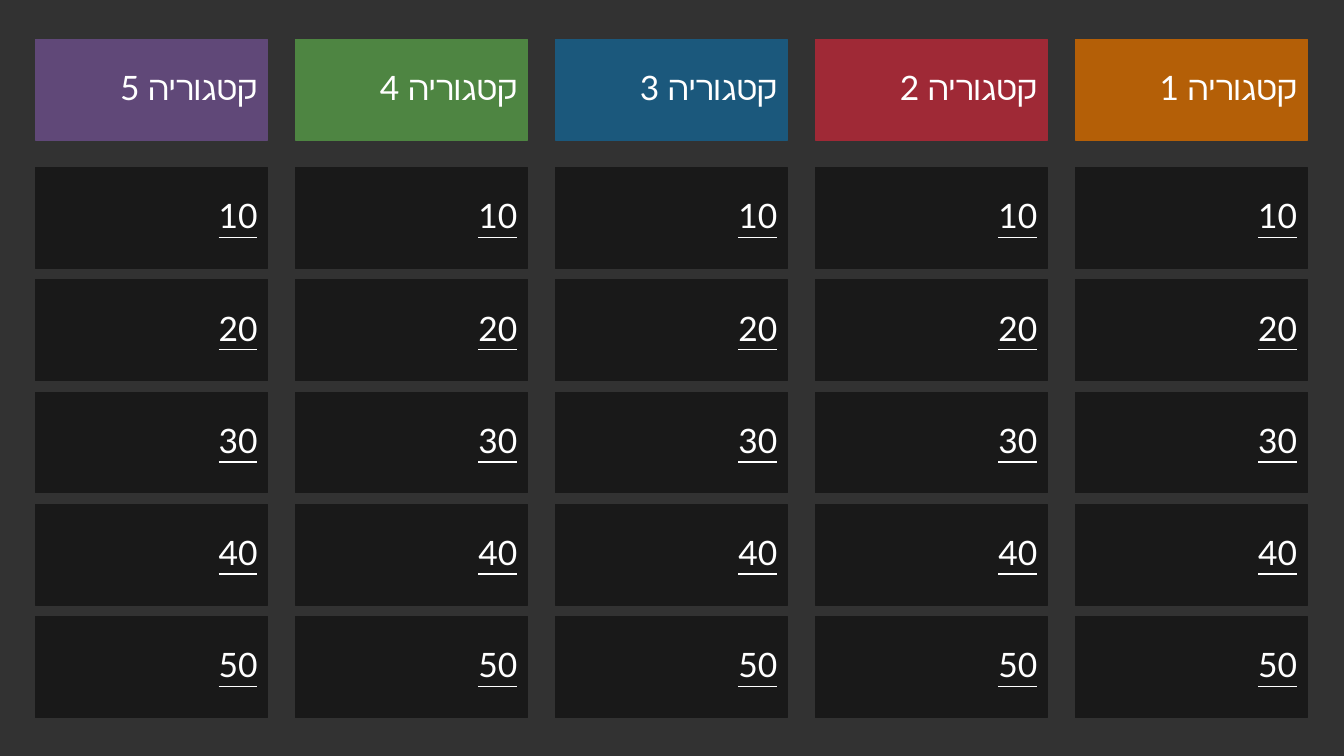
from dataclasses import dataclass

from lxml import etree
from pptx import Presentation
from pptx.dml.color import RGBColor
from pptx.enum.shapes import MSO_SHAPE
from pptx.enum.text import MSO_ANCHOR, PP_ALIGN
from pptx.oxml.ns import qn
from pptx.util import Cm, Pt

RECTANGLE = MSO_SHAPE.RECTANGLE
MIDDLE = MSO_ANCHOR.MIDDLE
RIGHT = PP_ALIGN.RIGHT
BLANK_LAYOUT = 6


@dataclass(frozen=True)
class Theme:
    background: str = "323232"
    tile: str = "191919"
    text: str = "FFFFFF"
    font: str = "Lato"
    size: int = 24
    line_width: float = 0.75


THEME = Theme()

CATEGORIES = [
    ("קטגוריה 1", "B45F07"),
    ("קטגוריה 2", "9F2936"),
    ("קטגוריה 3", "1B587C"),
    ("קטגוריה 4", "4E8542"),
    ("קטגוריה 5", "604878"),
]
POINTS = [10, 20, 30, 40, 50]

TILE_WIDTH, TILE_HEIGHT = 5.84, 2.54
FIRST_LEFT, COLUMN_STEP = 27.1, 6.55
HEADER_TOP = 0.99
POINTS_TOP, ROW_STEP = 4.22, 2.83


def format_rtl_text(tf, text, underline):
    tf.word_wrap = True
    tf.vertical_anchor = MIDDLE
    tf.text = text
    p = tf.paragraphs[0]
    p.alignment = RIGHT
    p.line_spacing = 0.9
    p._p.get_or_add_pPr().set("rtl", "1")
    r = p.runs[0]
    r.font.size = Pt(THEME.size)
    r.font.name = THEME.font
    r.font.color.rgb = RGBColor.from_string(THEME.text)
    if underline:
        r.font.underline = True
    cs = etree.SubElement(r._r.get_or_add_rPr(), qn("a:cs"))
    cs.set("typeface", THEME.font)


def add_tile(slide, left, top, text, color, underline=False):
    sp = slide.shapes.add_shape(
        RECTANGLE, Cm(left), Cm(top), Cm(TILE_WIDTH), Cm(TILE_HEIGHT)
    )
    sp.shadow.inherit = False
    sp.fill.solid()
    sp.fill.fore_color.rgb = RGBColor.from_string(color)
    sp.line.color.rgb = RGBColor.from_string(color)
    sp.line.width = Pt(THEME.line_width)
    format_rtl_text(sp.text_frame, text, underline)


def add_category(slide, left, title, color):
    add_tile(slide, left, HEADER_TOP, title, color)
    for row, points in enumerate(POINTS):
        top = POINTS_TOP + row * ROW_STEP
        add_tile(slide, left, top, str(points), THEME.tile, underline=True)


def main():
    prs = Presentation()
    prs.slide_width = Cm(33.87)
    prs.slide_height = Cm(19.05)
    slide = prs.slides.add_slide(prs.slide_layouts[BLANK_LAYOUT])
    fill = slide.background.fill
    fill.solid()
    fill.fore_color.rgb = RGBColor.from_string(THEME.background)
    for column, (title, color) in enumerate(CATEGORIES):
        add_category(slide, FIRST_LEFT - column * COLUMN_STEP, title, color)
    prs.save("out.pptx")


if __name__ == "__main__":
    main()
